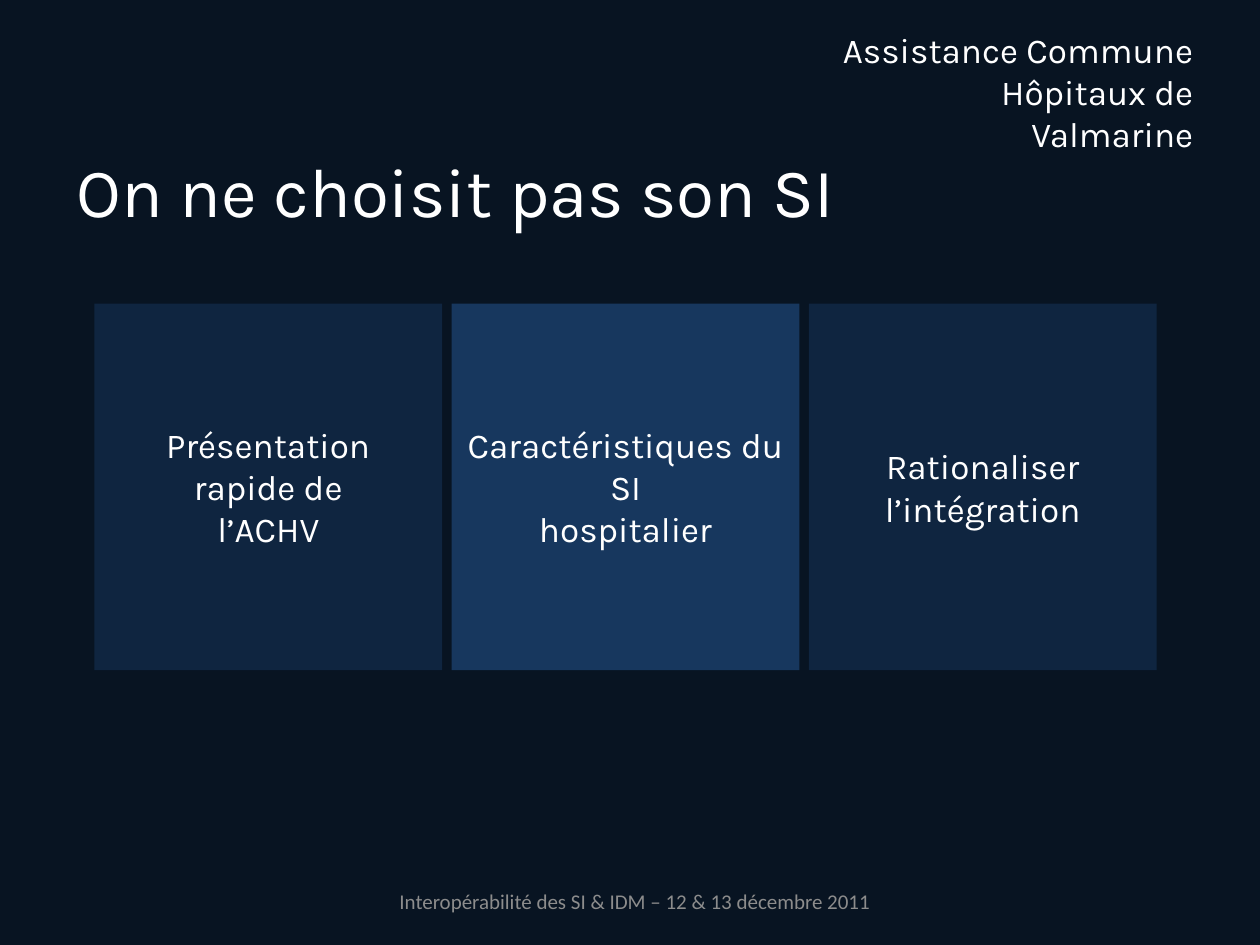
"""Build the three-topic agenda slide on hospital information systems."""
from dataclasses import dataclass

from lxml import etree
from pptx import Presentation
from pptx.dml.color import RGBColor
from pptx.enum.shapes import MSO_SHAPE
from pptx.enum.text import MSO_ANCHOR, PP_ALIGN
from pptx.oxml.ns import qn
from pptx.util import Inches, Pt

TITLE = "On ne choisit pas son SI"
HOSPITAL = "Assistance Commune\nHôpitaux de Valmarine"
FOOTER = "Interopérabilité des SI & IDM – 12 & 13 décembre 2011"
TOPICS = [
    "Présentation\nrapide de\nl’ACHV",
    "Caractéristiques du SI\nhospitalier",
    "Rationaliser\vl’intégration",
]
CURRENT = 1

CARD_LEFT, CARD_TOP, CARD_W, CARD_H = 0.75, 2.41, 2.76, 2.91
CARD_STEP = 2.835


@dataclass(frozen=True)
class Theme:
    background: str = "081422"
    card: str = "17375E"
    text: str = "FFFFFF"
    muted: str = "8C8C8C"
    font: str = "Karla"
    footer_font: str = "Calibri"
    title_size: float = 39.6
    body_size: float = 20
    footer_size: float = 12
    dimmed_alpha: int = 51


THEME = Theme()


def set_fill(fill, color):
    fill.solid()
    fill.fore_color.rgb = RGBColor.from_string(color)


def write(sp, text, align, size=THEME.body_size, color=THEME.text, font=THEME.font):
    tf = sp.text_frame
    tf.text = text
    tf.word_wrap = True
    tf.vertical_anchor = MSO_ANCHOR.MIDDLE
    for p in tf.paragraphs:
        p.alignment = align
        for r in p.runs:
            r.font.size = Pt(size)
            r.font.name = font
            r.font.color.rgb = RGBColor.from_string(color)


def add_text(slide, box, text, align, **style):
    sp = slide.shapes.add_textbox(*map(Inches, box))
    write(sp, text, align, **style)


def add_card(slide, index, text):
    left = CARD_LEFT + index * CARD_STEP
    box = map(Inches, (left, CARD_TOP, CARD_W, CARD_H))
    sp = slide.shapes.add_shape(MSO_SHAPE.RECTANGLE, *box)
    sp.shadow.inherit = False
    sp.line.fill.background()
    set_fill(sp.fill, THEME.card)
    if index != CURRENT:
        color = sp.fill._xPr.find(qn("a:solidFill"))[0]
        etree.SubElement(color, qn("a:alpha"), val=str(THEME.dimmed_alpha * 1000))
    write(sp, text, PP_ALIGN.CENTER)


def main():
    prs = Presentation()
    prs.slide_width, prs.slide_height = Inches(10), Inches(7.5)
    slide = prs.slides.add_slide(prs.slide_layouts[5])
    set_fill(slide.background.fill, THEME.background)

    title = slide.shapes.title
    title.left, title.top, title.width, title.height = map(Inches, (0.51, 1.15, 8.94, 0.71))
    write(title, TITLE, PP_ALIGN.LEFT, size=THEME.title_size)

    add_text(slide, (6.5, 0.29, 3.07, 0.87), HOSPITAL, PP_ALIGN.RIGHT)
    for i, topic in enumerate(TOPICS):
        add_card(slide, i, topic)
    add_text(slide, (3.03, 6.95, 4.02, 0.4), FOOTER, PP_ALIGN.CENTER,
             size=THEME.footer_size, color=THEME.muted, font=THEME.footer_font)
    prs.save("out.pptx")


if __name__ == "__main__":
    main()
